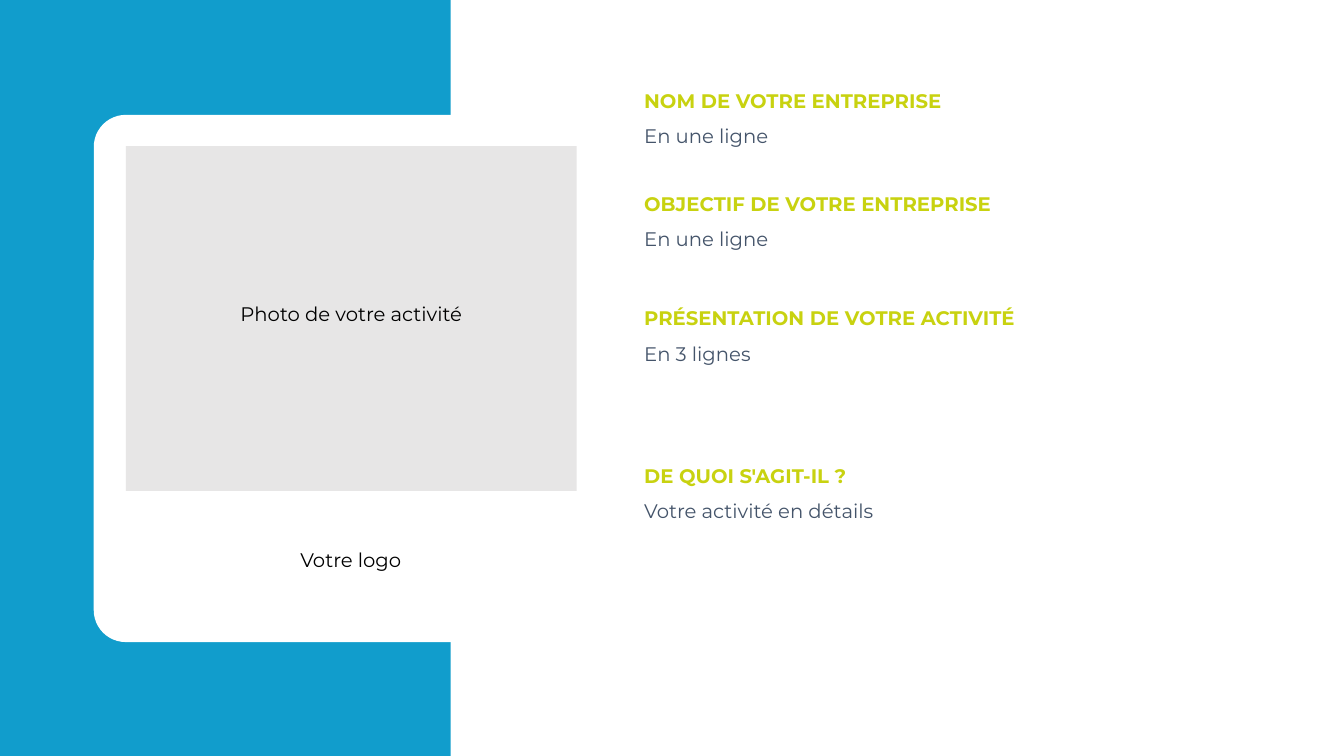
from pptx import Presentation
from pptx.dml.color import RGBColor
from pptx.enum.shapes import MSO_SHAPE
from pptx.enum.text import MSO_ANCHOR, PP_ALIGN
from pptx.util import Inches, Pt

COLORS = {
    "blue": "119DCC",
    "white": "FFFFFF",
    "gray": "E7E6E6",
    "black": "000000",
    "lime": "C8D210",
    "slate": "44546A",
}

presentation = Presentation()
presentation.slide_width = Inches(13.33)
presentation.slide_height = Inches(7.5)
slide = presentation.slides.add_slide(presentation.slide_layouts[6])


def add_panel(kind, left, top, width, height, color):
    shape = slide.shapes.add_shape(
        kind, Inches(left), Inches(top), Inches(width), Inches(height))
    shape.shadow.inherit = False
    shape.fill.solid()
    shape.fill.fore_color.rgb = RGBColor.from_string(COLORS[color])
    shape.line.fill.background()
    return shape


def write_text(shape, text, color, bold=False, alignment=PP_ALIGN.LEFT):
    text_frame = shape.text_frame
    text_frame.word_wrap = True
    text_frame.text = text
    paragraph = text_frame.paragraphs[0]
    paragraph.alignment = alignment
    font = paragraph.runs[0].font
    font.name = "Montserrat"
    font.size = Pt(14)
    font.bold = bold
    font.color.rgb = RGBColor.from_string(COLORS[color])


# Blue side band and white card
add_panel(MSO_SHAPE.RECTANGLE, 0, 0, 4.47, 7.5, "blue")
card = add_panel(MSO_SHAPE.ROUNDED_RECTANGLE, 0.93, 1.14, 5.11, 5.23, "white")
card.adjustments[0] = 0.062

# Photo area, with its label slightly above the middle
photo_area = add_panel(MSO_SHAPE.RECTANGLE, 1.25, 1.45, 4.47, 3.42, "gray")
write_text(photo_area, "Photo de votre activité", "black", alignment=PP_ALIGN.CENTER)
photo_area.text_frame.vertical_anchor = MSO_ANCHOR.MIDDLE
photo_area.text_frame.margin_bottom = Inches(0.14)

# Logo label
logo_label = slide.shapes.add_textbox(
    Inches(2.36), Inches(5.39), Inches(2.24), Inches(0.34))
write_text(logo_label, "Votre logo", "black", alignment=PP_ALIGN.CENTER)

# Company sections: heading top, heading, description
sections = [
    (0.83, "NOM DE VOTRE ENTREPRISE", "En une ligne"),
    (1.85, "OBJECTIF DE VOTRE ENTREPRISE", "En une ligne"),
    (2.99, "PRÉSENTATION DE VOTRE ACTIVITÉ", "En 3 lignes"),
    (4.55, "DE QUOI S'AGIT-IL ?", "Votre activité en détails"),
]
for top, heading, description in sections:
    heading_box = slide.shapes.add_textbox(
        Inches(6.29), Inches(top), Inches(5.59), Inches(0.34))
    write_text(heading_box, heading, "lime", bold=True)
    description_box = slide.shapes.add_textbox(
        Inches(6.29), Inches(top + 0.35), Inches(6.28), Inches(0.34))
    write_text(description_box, description, "slate")

presentation.save("out.pptx")
